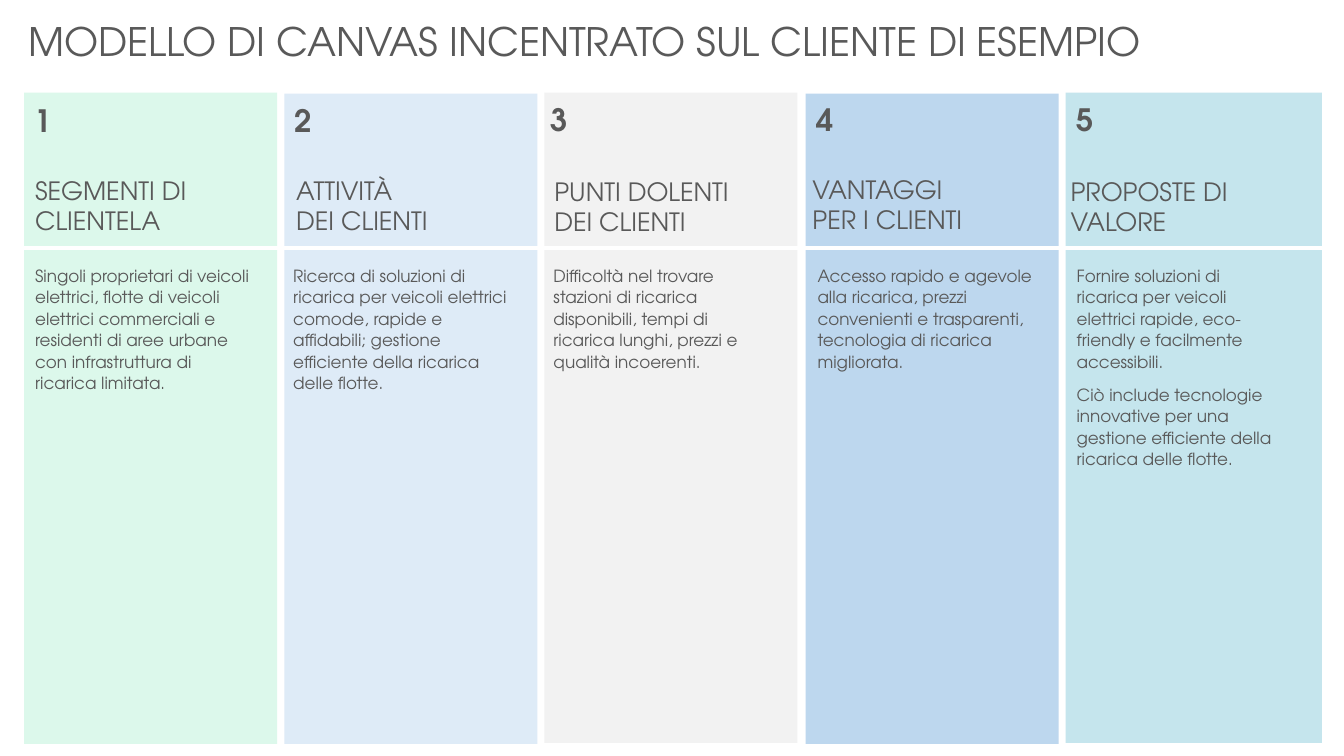
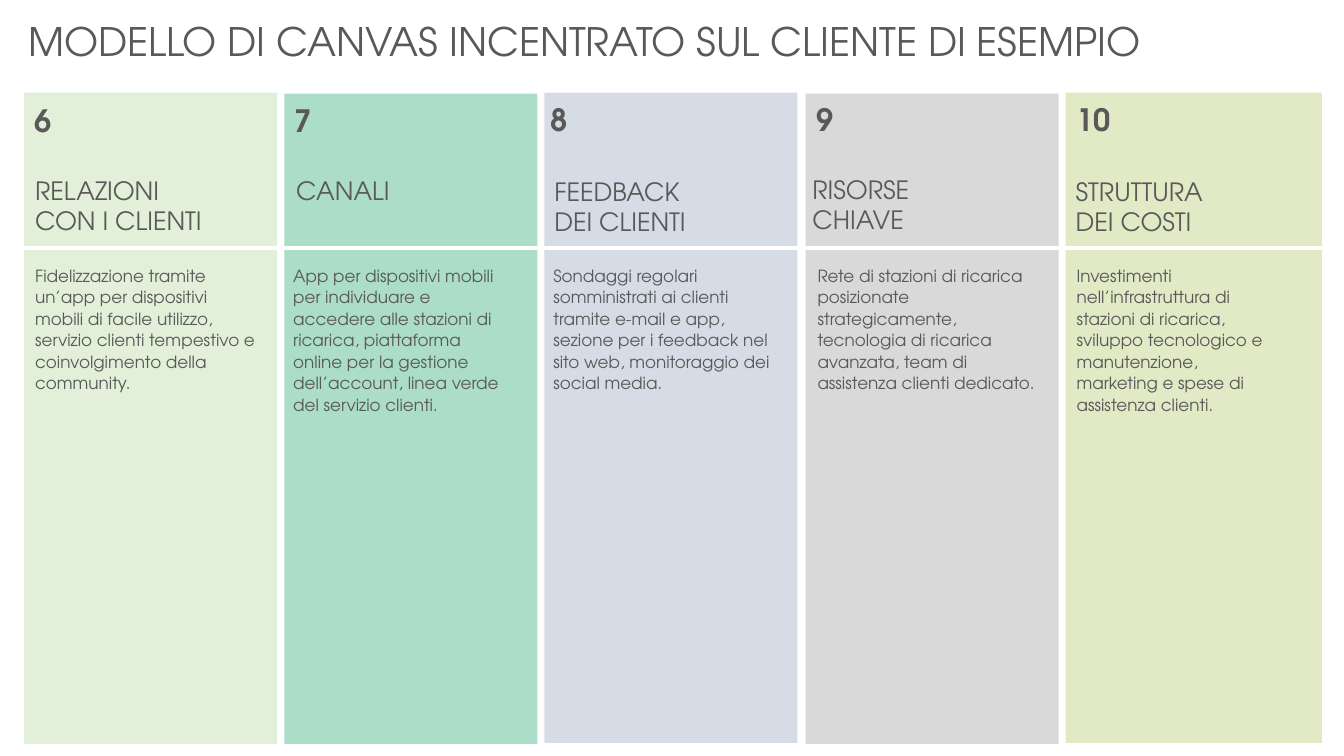
from dataclasses import dataclass

from pptx import Presentation
from pptx.dml.color import RGBColor
from pptx.enum.shapes import MSO_CONNECTOR, MSO_SHAPE
from pptx.enum.text import MSO_AUTO_SIZE
from pptx.oxml.ns import qn
from pptx.util import Pt
from lxml import etree

PX = 9144  # 100 px to the inch


@dataclass(frozen=True)
class Theme:
    font: str = "TeX Gyre Adventor"
    ink: str = "595959"
    rule: str = "FFFFFF"
    title: int = 28
    number: int = 22
    heading: int = 18
    body: int = 12
    rule_width: float = 2.25


T = Theme()

TITLE = "MODELLO DI CANVAS INCENTRATO SUL CLIENTE DI ESEMPIO"

# Each column: fill, heading, body paragraphs
SLIDES = [
    [
        ("DCF8EB", "SEGMENTI DI CLIENTELA",
         ["Singoli proprietari di veicoli elettrici, flotte di veicoli elettrici "
          "commerciali e residenti di aree urbane con infrastruttura di ricarica limitata."]),
        ("DEEBF7", "ATTIVITÀ \nDEI CLIENTI",
         ["Ricerca di soluzioni di ricarica per veicoli elettrici comode, rapide e "
          "affidabili; gestione efficiente della ricarica delle flotte."]),
        ("F2F2F2", "PUNTI DOLENTI \nDEI CLIENTI",
         ["Difficoltà nel trovare stazioni di ricarica disponibili, tempi di ricarica "
          "lunghi, prezzi e qualità incoerenti."]),
        ("BDD7EE", "VANTAGGI \nPER I CLIENTI",
         ["Accesso rapido e agevole alla ricarica, prezzi convenienti e trasparenti, "
          "tecnologia di ricarica migliorata."]),
        ("C5E5ED", "PROPOSTE DI VALORE",
         ["Fornire soluzioni di ricarica per veicoli elettrici rapide, eco-friendly e "
          "facilmente accessibili.",
          "Ciò include tecnologie innovative per una gestione efficiente della ricarica "
          "delle flotte."]),
    ],
    [
        ("E2F0D9", "RELAZIONI CON I CLIENTI",
         ["Fidelizzazione tramite un’app per dispositivi mobili di facile utilizzo, "
          "servizio clienti tempestivo e coinvolgimento della community."]),
        ("ABDDC9", "CANALI",
         ["App per dispositivi mobili per individuare e accedere alle stazioni di "
          "ricarica, piattaforma online per la gestione dell’account, linea verde del "
          "servizio clienti."]),
        ("D6DCE5", "FEEDBACK \nDEI CLIENTI",
         ["Sondaggi regolari somministrati ai clienti tramite e-mail e app, sezione per "
          "i feedback nel sito web, monitoraggio dei social media."]),
        ("D9D9D9", "RISORSE \nCHIAVE",
         ["Rete di stazioni di ricarica posizionate strategicamente, tecnologia di "
          "ricarica avanzata, team di assistenza clienti dedicato."]),
        ("E1E9C5", "STRUTTURA \nDEI COSTI",
         ["Investimenti nell’infrastruttura di stazioni di ricarica, sviluppo "
          "tecnologico e manutenzione, marketing e spese di assistenza clienti."]),
    ],
]

PANEL_LEFT, PANEL_STEP = 24, 258.25
PANELS = [(92, 251, 646), (93, 251, 645), (92, 251, 645),
          (93, 251, 645), (92, 254, 645)]  # top, width, height
NUMBERS = [(24, 93), (282, 93), (536, 92), (800, 92), (1058, 92)]  # left, top
HEADING_TOPS = [169, 169, 170, 168, 170]
HEADINGS = [  # left, width on each slide
    [(25, 250), (284, 250), (540, 250), (796, 250), (1052, 250)],
    [(25, 204), (284, 250), (540, 250), (796, 250), (1057, 245)],
]
BODIES = [(25, 238), (281, 235), (539, 235), (801, 238), (1058, 225)]  # left, width
BODY_TOP, BODY_HEIGHT = 257, 200


def emu(*lengths):
    return [round(v * PX) for v in lengths]


def add_text(s, box, paragraphs, size, bold=False, spaced=False, grow=False):
    tf = s.shapes.add_textbox(*emu(*box)).text_frame
    tf.word_wrap = True
    tf.auto_size = MSO_AUTO_SIZE.SHAPE_TO_FIT_TEXT if grow else MSO_AUTO_SIZE.NONE
    for i, text in enumerate(paragraphs):
        p = tf.add_paragraph() if i else tf.paragraphs[0]
        p.text = text
        if spaced:
            p.line_spacing = 1.07
            p.space_after = Pt(8)
        for r in p.runs:
            r.font.name = T.font
            r.font.size = Pt(size)
            r.font.bold = bold
            r.font.color.rgb = RGBColor.from_string(T.ink)


def add_panel(s, column, fill):
    top, width, height = PANELS[column]
    left = round(PANEL_LEFT + column * PANEL_STEP)
    sp = s.shapes.add_shape(MSO_SHAPE.RECTANGLE, *emu(left, top, width, height))
    sp.shadow.inherit = False
    sp.fill.solid()
    sp.fill.fore_color.rgb = RGBColor.from_string(fill)
    sp.line.fill.background()


def add_rule(s):
    line = s.shapes.add_connector(MSO_CONNECTOR.STRAIGHT, *emu(24, 246, 1320, 246))
    line.line.color.rgb = RGBColor.from_string(T.rule)
    line.line.width = Pt(T.rule_width)
    etree.SubElement(line._element.spPr, qn("a:effectLst"))


def add_column_text(s, column, number, heading_box, heading, body):
    left, top = NUMBERS[column]
    width = 46 if number < 10 else 60
    add_text(s, (left, top, width, 64), [str(number)], T.number, bold=True, spaced=True)

    left, width = heading_box
    height = 71 if " " in heading else 40
    add_text(s, (left, HEADING_TOPS[column], width, height), [heading],
             T.heading, grow=True)

    left, width = BODIES[column]
    add_text(s, (left, BODY_TOP, width, BODY_HEIGHT), body, T.body, spaced=True)


def main():
    prs = Presentation()
    prs.slide_width, prs.slide_height = emu(1333, 750)
    number = 1
    for columns, heading_boxes in zip(SLIDES, HEADINGS):
        s = prs.slides.add_slide(prs.slide_layouts[6])
        add_text(s, (18, 12, 1295, 57), [TITLE], T.title, grow=True)
        for i, (fill, _, _) in enumerate(columns):
            add_panel(s, i, fill)
        add_rule(s)
        for i, (_, heading, body) in enumerate(columns):
            add_column_text(s, i, number, heading_boxes[i], heading, body)
            number += 1
    prs.save("out.pptx")


if __name__ == "__main__":
    main()
